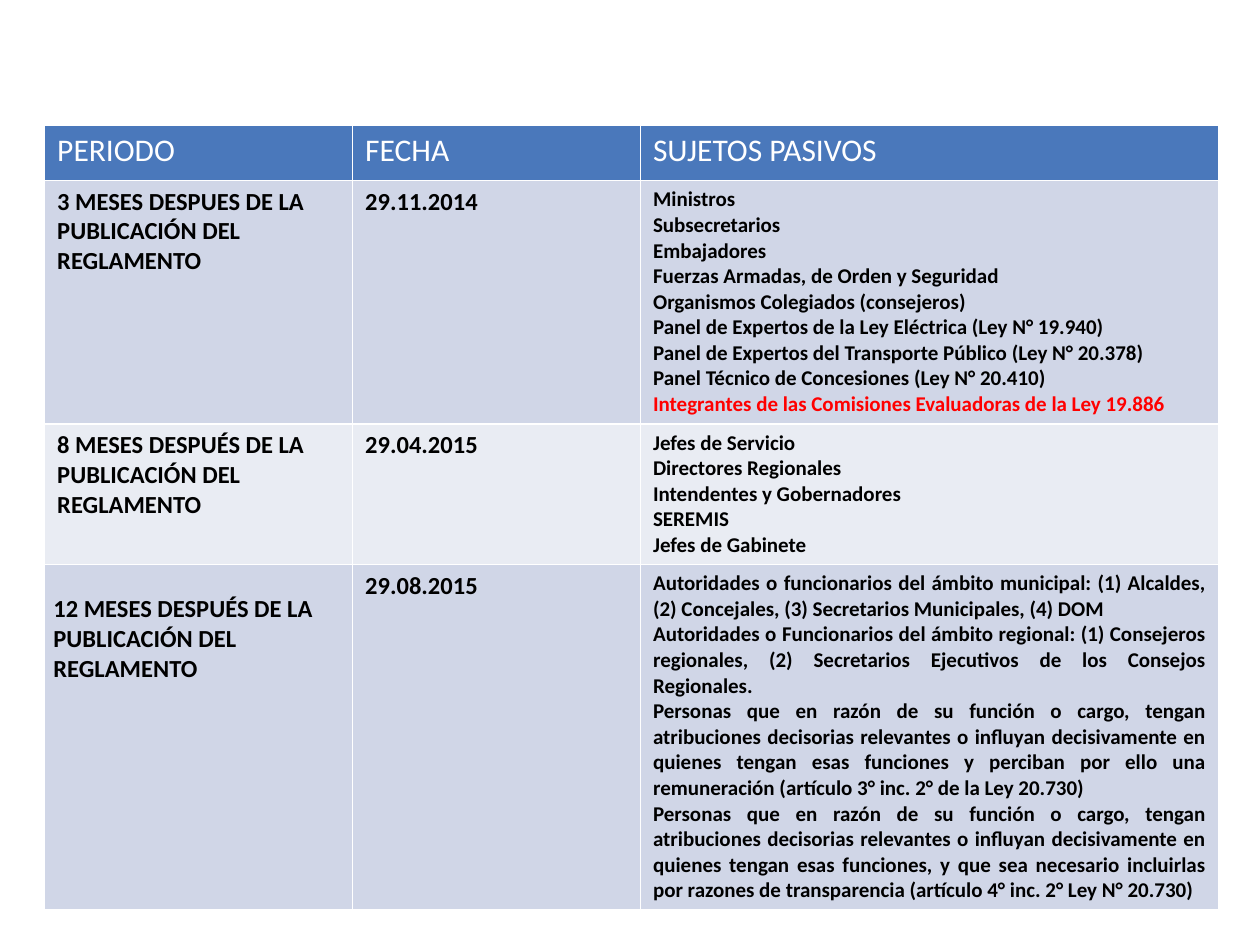
from pptx import Presentation
from pptx.dml.color import RGBColor
from pptx.enum.text import PP_ALIGN
from pptx.util import Pt

FONT = "Calibri"
HEADER_FILL, BAND_FILLS = "4A78BB", ("D0D6E7", "E9ECF3")
WHITE, BLACK, RED = "FFFFFF", "000000", "FF0000"

LEFT, TOP = 25.5, 71.5
COL_WIDTHS = (176, 164.5, 330.5)
ROW_HEIGHTS = (31.7, 139, 80.4, 196.8)

HEADERS = ("PERIODO", "FECHA", "SUJETOS PASIVOS")
HIGHLIGHT = "Integrantes de las Comisiones Evaluadoras de la Ley 19.886"
PERIODS = [
    ("3 MESES DESPUES DE LA PUBLICACIÓN DEL REGLAMENTO", "29.11.2014", [
        "Ministros",
        "Subsecretarios",
        "Embajadores",
        "Fuerzas Armadas, de Orden y Seguridad",
        "Organismos Colegiados (consejeros)",
        "Panel de Expertos de la Ley Eléctrica (Ley N° 19.940)",
        "Panel de Expertos del Transporte Público (Ley N° 20.378)",
        "Panel Técnico de Concesiones (Ley N° 20.410)",
        HIGHLIGHT,
    ]),
    ("8 MESES DESPUÉS DE LA PUBLICACIÓN DEL REGLAMENTO", "29.04.2015", [
        "Jefes de Servicio",
        "Directores Regionales",
        "Intendentes y Gobernadores",
        "SEREMIS",
        "Jefes de Gabinete",
    ]),
    ("12 MESES DESPUÉS DE LA PUBLICACIÓN DEL REGLAMENTO", "29.08.2015", [
        "Autoridades o funcionarios del ámbito municipal: (1) Alcaldes, "
        "(2) Concejales, (3) Secretarios Municipales, (4) DOM",
        "Autoridades o Funcionarios del ámbito regional: (1) Consejeros "
        "regionales, (2) Secretarios Ejecutivos de los Consejos Regionales.",
        "Personas que en razón de su función o cargo, tengan atribuciones "
        "decisorias relevantes o influyan decisivamente en quienes tengan esas "
        "funciones y perciban por ello una remuneración "
        "(artículo 3° inc. 2° de la Ley 20.730)",
        "Personas que en razón de su función o cargo, tengan atribuciones "
        "decisorias relevantes o influyan decisivamente en quienes tengan esas "
        "funciones, y que sea necesario incluirlas por razones de transparencia "
        "(artículo 4° inc. 2° Ley N° 20.730)",
    ]),
]


def rgb(color):
    return RGBColor.from_string(color)


def fill_cell(cell, lines, fill, size=14, color=BLACK, bold=True, align=PP_ALIGN.LEFT):
    cell.fill.solid()
    cell.fill.fore_color.rgb = rgb(fill)
    tf = cell.text_frame
    for i, line in enumerate(lines):
        p = tf.add_paragraph() if i else tf.paragraphs[0]
        p.alignment = align
        r = p.add_run()
        r.text = line
        r.font.name, r.font.size, r.font.bold = FONT, Pt(size), bold
        r.font.color.rgb = rgb(RED if line == HIGHLIGHT else color)


def main():
    prs = Presentation()
    prs.slide_width, prs.slide_height = Pt(720), Pt(540)
    s = prs.slides.add_slide(prs.slide_layouts[6])
    table = s.shapes.add_table(
        len(ROW_HEIGHTS), len(COL_WIDTHS), Pt(LEFT), Pt(TOP),
        Pt(sum(COL_WIDTHS)), Pt(sum(ROW_HEIGHTS))).table
    for column, width in zip(table.columns, COL_WIDTHS):
        column.width = Pt(width)
    for row, height in zip(table.rows, ROW_HEIGHTS):
        row.height = Pt(height)

    for col, header in enumerate(HEADERS):
        fill_cell(table.cell(0, col), [header], HEADER_FILL, size=18, color=WHITE, bold=False)
    for row, (period, date, subjects) in enumerate(PERIODS, start=1):
        fill = BAND_FILLS[(row - 1) % 2]
        fill_cell(table.cell(row, 0), [period], fill)
        fill_cell(table.cell(row, 1), [date], fill)
        fill_cell(table.cell(row, 2), subjects, fill, size=12, align=PP_ALIGN.JUSTIFY)

    last_period = table.cell(len(PERIODS), 0)
    last_period.margin_left = last_period.margin_right = Pt(5)
    last_period.margin_top, last_period.margin_bottom = Pt(17), Pt(0)
    prs.save("out.pptx")


if __name__ == "__main__":
    main()
